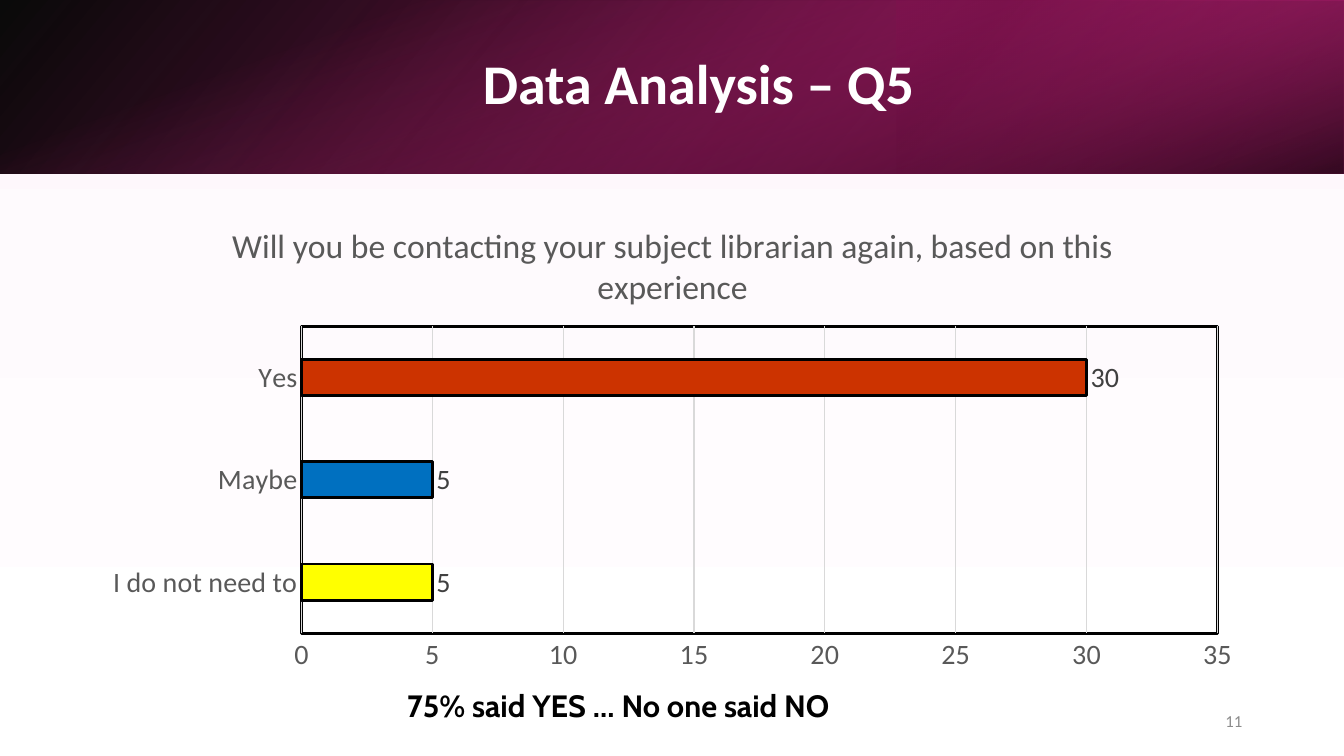
import pptx
import pptx.util
import pptx.dml.color
import pptx.chart.data
import pptx.enum.chart
import pptx.enum.shapes
import pptx.enum.text
import pptx.oxml
import pptx.oxml.ns

Inches = pptx.util.Inches
Pt = pptx.util.Pt
ALIGN = pptx.enum.text.PP_ALIGN
ANCHOR = pptx.enum.text.MSO_ANCHOR

ANSWERS = {
    "I do not need to": (5, "FFFF00"),
    "Maybe": (5, "0070C0"),
    "Yes": (30, "CC3300"),
}
QUESTION = "Will you be contacting your subject librarian again, based on this experience"


def color(value):
    return pptx.dml.color.RGBColor.from_string(value)


def style_font(font, size, value, name="Calibri", bold=False):
    font.name = name
    font.size = Pt(size)
    font.bold = bold
    font.color.rgb = color(value)


def style_line(line, value, width):
    line.color.rgb = color(value)
    line.width = Pt(width)


def gradient_xml(stops, angle):
    stop_xml = "".join(
        f'<a:gs pos="{position * 1000}"><a:srgbClr val="{value}">'
        f'<a:alpha val="{opacity * 1000}"/></a:srgbClr></a:gs>'
        for position, value, opacity in stops
    )
    return pptx.oxml.parse_xml(
        f'<a:gradFill {pptx.oxml.ns.nsdecls("a")} rotWithShape="1"><a:gsLst>{stop_xml}'
        f'</a:gsLst><a:lin ang="{angle * 60000}" scaled="0"/></a:gradFill>'
    )


def set_background(slide, top, bottom):
    fill = slide.background.fill
    fill.gradient()
    fill.gradient_angle = 270
    for stop, value in zip(fill.gradient_stops, (top, bottom)):
        stop.color.rgb = color(value)


def add_band(slide, box, stops, angle, rotation=0, flipped=False):
    shape = slide.shapes.add_shape(
        pptx.enum.shapes.MSO_SHAPE.RECTANGLE, *map(Inches, box)
    )
    shape.shadow.inherit = False
    shape.line.fill.background()
    shape.rotation = rotation
    properties = shape.element.spPr
    if flipped:
        properties.xfrm.set("flipH", "1")
    properties.find(pptx.oxml.ns.qn("a:prstGeom")).addnext(gradient_xml(stops, angle))


def add_text(slide, box, text, size, value, name="Calibri", bold=False,
             align=ALIGN.LEFT, anchor=ANCHOR.TOP, spacing=1.0):
    frame = slide.shapes.add_textbox(*map(Inches, box)).text_frame
    frame.word_wrap = True
    frame.vertical_anchor = anchor
    paragraph = frame.paragraphs[0]
    paragraph.alignment = align
    paragraph.line_spacing = spacing
    run = paragraph.add_run()
    run.text = text
    style_font(run.font, size, value, name, bold)


def frame_plot(chart, left, top, width, height):
    plot_area = chart.element.chart.plotArea
    layout = plot_area.find(pptx.oxml.ns.qn("c:layout"))
    if layout is not None:
        plot_area.remove(layout)
    plot_area.insert(0, pptx.oxml.parse_xml(
        f'<c:layout {pptx.oxml.ns.nsdecls("c")}><c:manualLayout>'
        '<c:layoutTarget val="inner"/><c:xMode val="edge"/><c:yMode val="edge"/>'
        f'<c:x val="{left}"/><c:y val="{top}"/><c:w val="{width}"/><c:h val="{height}"/>'
        '</c:manualLayout></c:layout>'
    ))
    plot_area.append(pptx.oxml.parse_xml(
        f'<c:spPr {pptx.oxml.ns.nsdecls("c", "a")}><a:noFill/><a:ln w="{Pt(2)}">'
        '<a:solidFill><a:srgbClr val="000000"/></a:solidFill></a:ln></c:spPr>'
    ))


def style_axis(axis):
    axis.major_tick_mark = pptx.enum.chart.XL_TICK_MARK.NONE
    axis.minor_tick_mark = pptx.enum.chart.XL_TICK_MARK.NONE
    style_font(axis.tick_labels.font, 20, "595959")


def add_answer_chart(slide, box):
    data = pptx.chart.data.CategoryChartData()
    data.categories = list(ANSWERS)
    data.add_series("Series 1", [count for count, _ in ANSWERS.values()])
    chart = slide.shapes.add_chart(
        pptx.enum.chart.XL_CHART_TYPE.BAR_CLUSTERED, *map(Inches, box), data
    ).chart
    style_font(chart.font, 20, "000000")
    chart.has_legend = False
    chart.has_title = True
    run = chart.chart_title.text_frame.paragraphs[0].add_run()
    run.text = QUESTION
    style_font(run.font, 24, "595959")
    frame_plot(chart, 0.18, 0.26, 0.79, 0.64)

    style_axis(chart.category_axis)
    style_line(chart.category_axis.format.line, "D9D9D9", 0.75)
    chart.category_axis.has_major_gridlines = False
    values = chart.value_axis
    style_axis(values)
    values.minimum_scale, values.maximum_scale, values.major_unit = 0, 35, 5
    values.format.line.fill.background()
    style_line(values.major_gridlines.format.line, "D9D9D9", 0.75)

    plot = chart.plots[0]
    plot.gap_width = 182
    plot.vary_by_categories = False
    series = plot.series[0]
    series.format.fill.solid()
    series.format.fill.fore_color.rgb = color("E32D91")
    style_line(series.format.line, "000000", 2)
    for index, (_, value) in enumerate(ANSWERS.values()):
        point = series.points[index].format
        point.fill.solid()
        point.fill.fore_color.rgb = color(value)
        style_line(point.line, "000000", 2)
    labels = series.data_labels
    labels.show_value = True
    labels.position = pptx.enum.chart.XL_LABEL_POSITION.OUTSIDE_END
    style_font(labels.font, 20, "404040")


def main():
    presentation = pptx.Presentation()
    presentation.slide_width = Inches(13.33)
    presentation.slide_height = Inches(7.5)
    slide = presentation.slides.add_slide(presentation.slide_layouts[6])
    set_background(slide, "FEF7FC", "FFFFFF")

    add_band(slide, (0, 0, 13.33, 1.72),
             [(0, "000000", 96), (100, "B4186E", 100)], 140, flipped=True)
    add_band(slide, (8.89, 0, 4.44, 1.72),
             [(19, "781049", 68), (100, "E32D91", 79)], 320, 180, True)
    add_band(slide, (5.8, -5.8, 1.72, 13.33),
             [(23, "E32D91", 0), (99, "000000", 74)], 340, 90)

    add_text(slide, (1.5, 0.38, 10.98, 0.96), "Data Analysis – Q5 ", 40, "FFFFFF",
             bold=True, align=ALIGN.CENTER, anchor=ANCHOR.MIDDLE, spacing=0.9)
    add_answer_chart(slide, (0.92, 2, 11.5, 4.76))
    add_text(slide, (3.94, 6.76, 6.66, 0.47), "75% said YES … No one said NO",
             22, "000000", "Cabin", True)
    add_text(slide, (9.42, 6.95, 3, 0.4), "11", 12, "8C8C8C",
             align=ALIGN.RIGHT, anchor=ANCHOR.MIDDLE)
    presentation.save("out.pptx")


if __name__ == "__main__":
    main()
